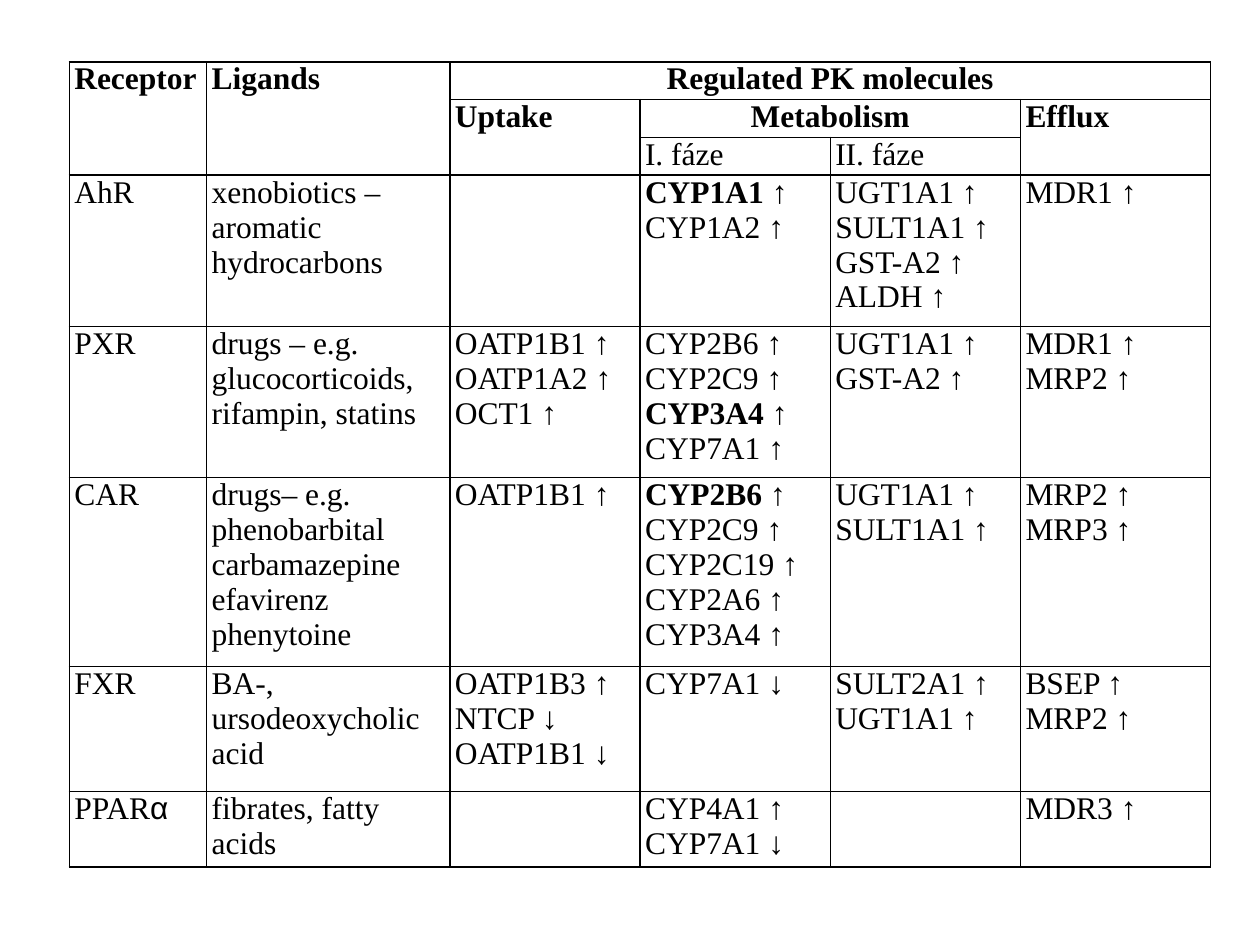
from dataclasses import dataclass
from itertools import product
from typing import NamedTuple

from lxml import etree
from pptx import Presentation
from pptx.dml.color import RGBColor
from pptx.enum.text import MSO_ANCHOR, PP_ALIGN
from pptx.oxml.ns import qn
from pptx.util import Inches, Pt

LEFT, CENTER = PP_ALIGN.LEFT, PP_ALIGN.CENTER
TOP = MSO_ANCHOR.TOP


@dataclass(frozen=True)
class Theme:
    ink: str = "000000"
    font: str = "Times New Roman"
    greek_font: str = "Arial"
    text_size: float = 18
    border_width: float = 1


class Heading(NamedTuple):
    row: int
    column: int
    text: str
    row_span: int = 1
    column_span: int = 1
    align: PP_ALIGN = LEFT


class Receptor(NamedTuple):
    name: str
    ligands: str
    uptake: str
    phase_one: str
    phase_two: str
    efflux: str


THEME = Theme()
COLUMN_WIDTHS = [1.09, 1.93] + [1.51] * 4
ROW_HEIGHTS = [0.3] * 3 + [1.2, 1.2, 1.5, 0.99, 0.6]
CELL_FORMAT = {
    "margin_left": Inches(0.04),
    "margin_right": Inches(0.04),
    "margin_top": 0,
    "margin_bottom": 0,
    "vertical_anchor": TOP,
}
HEADINGS = [
    Heading(0, 0, "*Receptor*", row_span=3),
    Heading(0, 1, "*Ligands*", row_span=3),
    Heading(0, 2, "*Regulated PK molecules*", column_span=4, align=CENTER),
    Heading(1, 2, "*Uptake*", row_span=2),
    Heading(1, 3, "*Metabolism*", column_span=2, align=CENTER),
    Heading(1, 5, "*Efflux*", row_span=2),
    Heading(2, 3, "I. fáze"),
    Heading(2, 4, "II. fáze"),
]
RECEPTORS = [
    Receptor("AhR", "xenobiotics – aromatic hydrocarbons", "",
             "*CYP1A1 *↑\nCYP1A2 ↑",
             "UGT1A1 ↑ SULT1A1 ↑ GST-A2 ↑ ALDH ↑", "MDR1 ↑"),
    Receptor("PXR", "drugs – e.g. glucocorticoids, rifampin, statins",
             "OATP1B1 ↑\nOATP1A2 ↑ OCT1 ↑",
             "CYP2B6 ↑\nCYP2C9 ↑\n*CYP3A4 *↑ CYP7A1 ↑",
             "UGT1A1 ↑ GST-A2 ↑", "MDR1 ↑ MRP2 ↑"),
    Receptor("CAR", "drugs– e.g. phenobarbital\ncarbamazepine\nefavirenz\nphenytoine",
             "OATP1B1 ↑",
             "*CYP2B6 *↑ CYP2C9 ↑\nCYP2C19 ↑ CYP2A6 ↑ CYP3A4 ↑",
             "UGT1A1 ↑\nSULT1A1 ↑", "MRP2 ↑\nMRP3 ↑"),
    Receptor("FXR", "BA-, ursodeoxycholic acid",
             "OATP1B3 ↑\nNTCP ↓\nOATP1B1 ↓", "CYP7A1 ↓",
             "SULT2A1 ↑\nUGT1A1 ↑", "BSEP ↑\nMRP2 ↑"),
    Receptor("PPARα", "fibrates, fatty acids", "",
             "CYP4A1 ↑\nCYP7A1 ↓", "", "MDR3 ↑"),
]


def add_run(paragraph, text: str, bold: bool, font_name: str) -> None:
    run = paragraph.add_run()
    run.text = text
    font_format = {"name": font_name, "size": Pt(THEME.text_size), "bold": bold}
    for name, value in font_format.items():
        setattr(run.font, name, value)
    run.font.color.rgb = RGBColor.from_string(THEME.ink)


def write_cell(cell, text: str, align: PP_ALIGN = LEFT) -> None:
    for index, line in enumerate(text.split("\n")):
        frame = cell.text_frame
        paragraph = frame.add_paragraph() if index else frame.paragraphs[0]
        paragraph.alignment = align
        for position, part in enumerate(line.split("*")):
            latin, greek, _ = part.partition("α")
            for piece, font_name in ((latin, THEME.font), (greek, THEME.greek_font)):
                if piece:
                    add_run(paragraph, piece, position % 2 == 1, font_name)


def format_cell(cell) -> None:
    for name, value in CELL_FORMAT.items():
        setattr(cell, name, value)
    properties = cell._tc.get_or_add_tcPr()
    for side in ("lnL", "lnR", "lnT", "lnB"):
        line = etree.SubElement(properties, qn(f"a:{side}"), w=str(Pt(THEME.border_width)))
        fill = etree.SubElement(line, qn("a:solidFill"))
        etree.SubElement(fill, qn("a:srgbClr"), val=THEME.ink)
    cell.fill.background()


def add_receptor_table(slide) -> None:
    table = slide.shapes.add_table(
        len(ROW_HEIGHTS), len(COLUMN_WIDTHS), Inches(0.55), Inches(0.49),
        Inches(sum(COLUMN_WIDTHS)), Inches(sum(ROW_HEIGHTS))).table
    table.first_row = False
    table.horz_banding = False
    for column, width in zip(table.columns, COLUMN_WIDTHS):
        column.width = Inches(width)
    for row, height in zip(table.rows, ROW_HEIGHTS):
        row.height = Inches(height)
    for row, column in product(range(len(ROW_HEIGHTS)), range(len(COLUMN_WIDTHS))):
        format_cell(table.cell(row, column))
    for heading in HEADINGS:
        cell = table.cell(heading.row, heading.column)
        if heading.row_span * heading.column_span > 1:
            cell.merge(table.cell(heading.row + heading.row_span - 1,
                                  heading.column + heading.column_span - 1))
        write_cell(cell, heading.text, heading.align)
    for row, receptor in enumerate(RECEPTORS, start=3):
        for column, text in enumerate(receptor):
            write_cell(table.cell(row, column), text)


def main() -> None:
    presentation = Presentation()
    presentation.slide_width = Inches(10)
    presentation.slide_height = Inches(7.5)
    slide = presentation.slides.add_slide(presentation.slide_layouts[6])
    add_receptor_table(slide)
    presentation.save("out.pptx")


if __name__ == "__main__":
    main()
